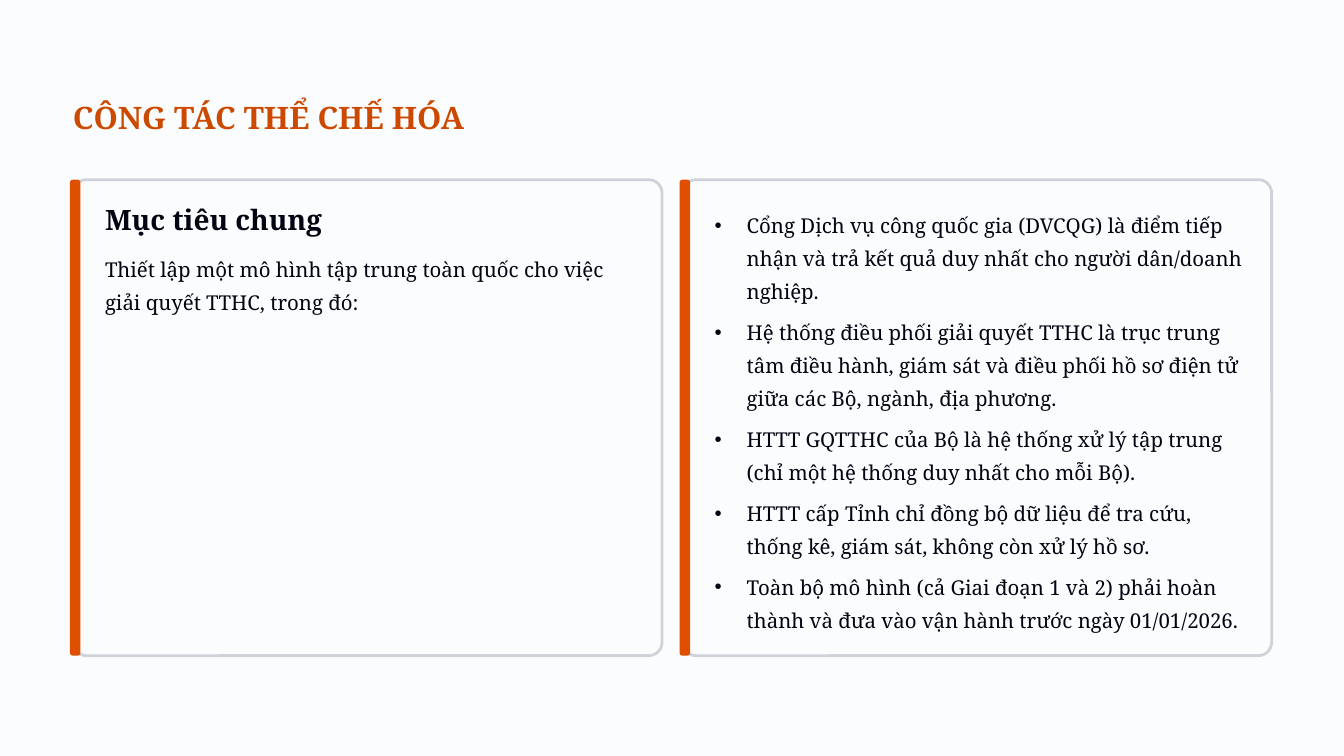
from lxml.etree import SubElement
from pptx import Presentation
from pptx.dml.color import RGBColor
from pptx.enum.shapes import MSO_SHAPE
from pptx.enum.text import MSO_ANCHOR, MSO_AUTO_SIZE, PP_ALIGN
from pptx.oxml.ns import qn
from pptx.util import Pt

PAPER = RGBColor(0xFB, 0xFC, 0xFE)
INK = RGBColor(0x01, 0x05, 0x11)
TITLE = RGBColor(0xCC, 0x49, 0x00)
ACCENT = RGBColor(0xE0, 0x4F, 0x00)
EDGE = RGBColor(0xCF, 0xD2, 0xD8)

PITCH = 522.5
TOP = 154
TALL = 408
LEFT = 90
WIDE = 457

GOAL = "Thiết lập một mô hình tập trung toàn quốc cho việc giải quyết TTHC, trong đó:"
POINTS = [
    "Cổng Dịch vụ công quốc gia (DVCQG) là điểm tiếp nhận và trả kết quả duy nhất cho người dân/doanh nghiệp.",
    "Hệ thống điều phối giải quyết TTHC là trục trung tâm điều hành, giám sát và điều phối hồ sơ điện tử giữa các Bộ, ngành, địa phương.",
    "HTTT GQTTHC của Bộ là hệ thống xử lý tập trung (chỉ một hệ thống duy nhất cho mỗi Bộ).",
    "HTTT cấp Tỉnh chỉ đồng bộ dữ liệu để tra cứu, thống kê, giám sát, không còn xử lý hồ sơ.",
    "Toàn bộ mô hình (cả Giai đoạn 1 và 2) phải hoàn thành và đưa vào vận hành trước ngày 01/01/2026.",
]

HEAD = {"size": Pt(26.5), "bold": True, "color": TITLE, "line": Pt(33)}
SUB = {"size": Pt(24), "bold": True, "color": INK, "line": Pt(27.5)}
BODY = {"size": Pt(17.5), "bold": False, "color": INK, "line": Pt(28.5)}


def apply(item, values):
    """Set each named attribute of an item."""
    for name, value in values.items():
        setattr(item, name, value)


def panel(slide, box, round_by, fill, edge=None):
    """Draw a rounded rectangle."""
    shape = slide.shapes.add_shape(MSO_SHAPE.ROUNDED_RECTANGLE, *map(Pt, box))
    shape.shadow.inherit = False
    shape.adjustments[0] = round_by
    shape.fill.solid()
    shape.fill.fore_color.rgb = fill
    if edge is None:
        shape.line.fill.background()
    else:
        shape.line.color.rgb = edge
        shape.line.width = Pt(2.4)


def card(slide, left):
    """Draw a framed card with an accent bar on its left side."""
    panel(slide, (left + 2.5, TOP, 505, TALL), 0.028, PAPER, EDGE)
    panel(slide, (left, TOP, 9, TALL), 0.279, ACCENT)


def mark(para, bullet):
    """Set the indent and bullet of a paragraph."""
    props = para._p.get_or_add_pPr()
    indent = Pt(27.5) if bullet else 0
    props.set("marL", str(indent))
    props.set("indent", str(-indent))
    if bullet:
        SubElement(props, qn("a:buChar")).set("char", "•")
    else:
        SubElement(props, qn("a:buNone"))


def write(shape, box, lines, style, bullet=False):
    """Place a text shape in front and fill it with styled paragraphs."""
    apply(shape, dict(zip(("left", "top", "width", "height"), map(Pt, box))))
    shape.element.getparent().append(shape.element)
    frame = shape.text_frame
    frame.text = "\n".join(lines)
    apply(frame, {
        "margin_left": 0, "margin_top": 0, "margin_right": 0, "margin_bottom": 0,
        "word_wrap": True, "auto_size": MSO_AUTO_SIZE.NONE,
        "vertical_anchor": MSO_ANCHOR.TOP,
    })
    for rank, para in enumerate(frame.paragraphs):
        mark(para, bullet)
        apply(para, {
            "alignment": PP_ALIGN.LEFT, "line_spacing": style["line"],
            "space_before": Pt(6.3 if rank else 0), "space_after": Pt(0),
        })
        for run in para.runs:
            apply(run.font, {
                "name": "Noto Serif", "size": style["size"], "bold": style["bold"],
            })
            run.font.color.rgb = style["color"]


def main():
    """Build and save the slide."""
    deck = Presentation()
    apply(deck, {"slide_width": Pt(1152), "slide_height": Pt(648)})
    slide = deck.slides.add_slide(deck.slide_layouts[3])
    slide.background.fill.solid()
    slide.background.fill.fore_color.rgb = PAPER
    title, goal, points = slide.placeholders
    for col in range(2):
        card(slide, 60 + col * PITCH)
    write(title, (62.5, 83.5, 345, 34), ["CÔNG TÁC THỂ CHẾ HÓA"], HEAD)
    label = slide.shapes.add_textbox(0, 0, 0, 0)
    write(label, (LEFT, 175, 223, 28), ["Mục tiêu chung"], SUB)
    write(goal, (LEFT, 213, WIDE, 57), [GOAL], BODY)
    write(points, (LEFT + PITCH, 175, WIDE, 367), POINTS, BODY, True)
    deck.save("out.pptx")


if __name__ == "__main__":
    main()
